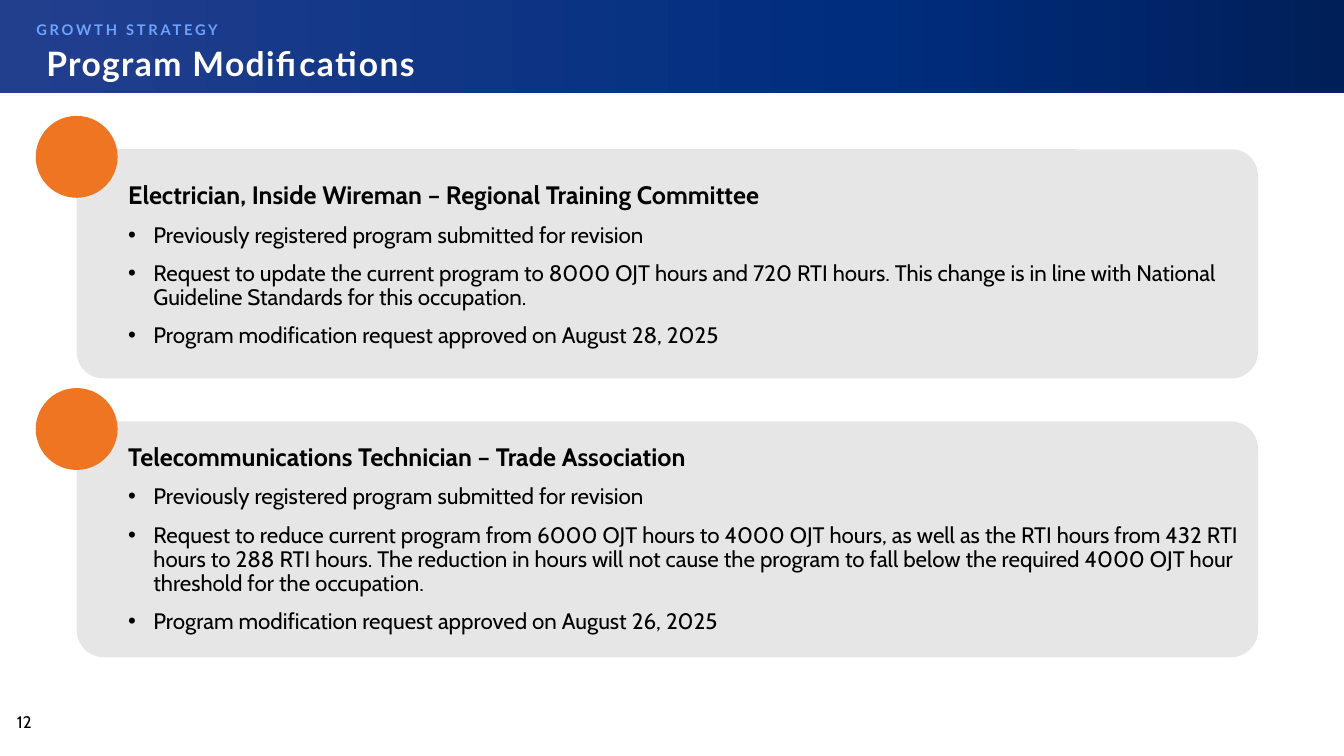
from dataclasses import dataclass

from lxml import etree
from pptx import Presentation
from pptx import util as u
from pptx.dml.color import RGBColor
from pptx.enum import shapes, text
from pptx.oxml import parse_xml
from pptx.oxml.ns import nsdecls, qn

COLORS = {
    "bar_left": "223F8E", "bar_mid": "002D7E", "bar_right": "001F58",
    "kicker": "6FA2FF", "white": "FFFFFF", "black": "000000",
    "card": "E7E6E6", "dot": "EE7623",
}
CARD_LEFT, CARD_WIDTH = 54.8, 843.8
DOT_SIZE, DOT_RISE = 58.5, 23.8
TEXT_LEFT, TEXT_WIDTH = 84.4, 814.2
INDENT = 18


@dataclass
class Program:
    """A program card with its heading and list."""
    top: float
    height: float
    text_top: float
    heading: str
    points: list[str]


PROGRAMS = [
    Program(106.6, 163.6, 108, "Electrician, Inside Wireman – Regional Training Committee", [
        "Previously registered program submitted for revision",
        "Request to update the current program to 8000 OJT hours and 720 RTI hours. "
        "This change is in line with National Guideline Standards for this occupation.",
        "Program modification request approved on August 28, 2025",
    ]),
    Program(301, 168.5, 301, "Telecommunications Technician – Trade Association", [
        "Previously registered program submitted for revision",
        "Request to reduce current program from 6000 OJT hours to 4000 OJT hours, as well as "
        "the RTI hours from 432 RTI hours to 288 RTI hours. The reduction in hours will not "
        "cause the program to fall below the required 4000 OJT hour threshold for the occupation.",
        "Program modification request approved on August 26, 2025",
    ]),
]


def apply(obj, **values) -> None:
    """Set every named attribute on an object."""
    for name, value in values.items():
        setattr(obj, name, value)


def place(sp, left: float, top: float, width: float, height: float) -> None:
    """Move and size a shape in points."""
    apply(sp, left=u.Pt(left), top=u.Pt(top), width=u.Pt(width), height=u.Pt(height))


def add_block(s, kind, box: tuple, color: str | None = None):
    """Add a borderless, shadowless shape."""
    sp = s.shapes.add_shape(kind, *map(u.Pt, box))
    sp.shadow.inherit = False
    sp.line.fill.background()
    if color:
        sp.fill.solid()
        sp.fill.fore_color.rgb = RGBColor.from_string(COLORS[color])
    return sp


def add_bar(s) -> None:
    """Add the header bar with its three-stop gradient."""
    sp = add_block(s, shapes.MSO_SHAPE.RECTANGLE, (0, 0, 960, 66.4))
    stops = "".join(
        f'<a:gs pos="{pos * 1000}"><a:srgbClr val="{COLORS[name]}"/></a:gs>'
        for pos, name in ((0, "bar_left"), (65, "bar_mid"), (100, "bar_right")))
    sp._element.spPr.insert(2, parse_xml(
        f'<a:gradFill {nsdecls("a")}><a:gsLst>{stops}</a:gsLst><a:lin ang="0" scaled="0"/></a:gradFill>'))


def set_frame(tf, anchor, inset: tuple | None = None) -> None:
    """Set wrapping, anchor and insets of a text frame."""
    apply(tf, word_wrap=True, auto_size=text.MSO_AUTO_SIZE.NONE, vertical_anchor=anchor)
    if inset:
        sides = ("margin_left", "margin_top", "margin_right", "margin_bottom")
        apply(tf, **dict(zip(sides, map(u.Pt, inset))))


def write(p, words: str, size: float, font: str, color: str, bold: bool = False,
          before: float = 0, tracking: float = 0) -> None:
    """Write one formatted run into a paragraph."""
    apply(p, alignment=text.PP_ALIGN.LEFT, line_spacing=0.9, space_before=u.Pt(before))
    r = p.add_run()
    r.text = words
    apply(r.font, size=u.Pt(size), name=font, bold=bold)
    r.font.color.rgb = RGBColor.from_string(COLORS[color])
    if tracking:
        r._r.get_or_add_rPr().set("spc", str(int(tracking * 100)))


def set_bullet(p, bulleted: bool) -> None:
    """Set or clear the bullet and hanging indent."""
    pPr = p._p.get_or_add_pPr()
    indent = u.Pt(INDENT) if bulleted else 0
    pPr.set("marL", str(indent))
    pPr.set("indent", str(-indent))
    if bulleted:
        etree.SubElement(pPr, qn("a:buFont")).set("typeface", "Arial")
        etree.SubElement(pPr, qn("a:buChar")).set("char", "•")
    else:
        etree.SubElement(pPr, qn("a:buNone"))


def add_card(s, program: Program) -> None:
    """Draw the card and dot of a program."""
    card = add_block(s, shapes.MSO_SHAPE.ROUNDED_RECTANGLE,
                     (CARD_LEFT, program.top, CARD_WIDTH, program.height), "card")
    card.adjustments[0] = 0.115
    add_block(s, shapes.MSO_SHAPE.OVAL,
              (CARD_LEFT - DOT_SIZE / 2, program.top - DOT_RISE, DOT_SIZE, DOT_SIZE), "dot")


def fill_body(body, program: Program) -> None:
    """Write a program into a body placeholder."""
    place(body, TEXT_LEFT, program.text_top, TEXT_WIDTH, program.height)
    tf = body.text_frame
    set_frame(tf, text.MSO_ANCHOR.MIDDLE)
    set_bullet(tf.paragraphs[0], False)
    write(tf.paragraphs[0], program.heading, 18, "Cabin", "black", bold=True)
    for point in program.points:
        p = tf.add_paragraph()
        set_bullet(p, True)
        write(p, point, 16, "Cabin", "black", before=10)


def add_label(s, box: tuple, anchor, inset: tuple | None, words: str, *style, **extra) -> None:
    """Add a one-line text box."""
    tf = s.shapes.add_textbox(*map(u.Pt, box)).text_frame
    set_frame(tf, anchor, inset)
    write(tf.paragraphs[0], words, *style, **extra)


def main() -> None:
    """Build and save the slide."""
    prs = Presentation()
    apply(prs, slide_width=u.Pt(960), slide_height=u.Pt(540))
    s = prs.slides.add_slide(prs.slide_layouts[3])
    title, *bodies = list(s.placeholders)

    add_bar(s)
    for program in PROGRAMS:
        add_card(s, program)
    for holder in (title, *bodies):
        s.shapes._spTree.append(holder._element)

    place(title, 25.9, 28.8, 828, 36.7)
    set_frame(title.text_frame, text.MSO_ANCHOR.MIDDLE)
    write(title.text_frame.paragraphs[0], "Program Modifications", 24, "Lato", "white",
          bold=True, tracking=1)
    for body, program in zip(bodies, PROGRAMS):
        fill_body(body, program)

    add_label(s, (25.9, 15.8, 264, 12.2), text.MSO_ANCHOR.BOTTOM, (0, 0, 0, 0),
              "GROWTH STRATEGY", 10.5, "Lato", "kicker", bold=True, tracking=2)
    add_label(s, (5, 506.2, 43.2, 21.6), text.MSO_ANCHOR.TOP, None, "12", 12, "Cabin", "black")
    prs.save("out.pptx")


if __name__ == "__main__":
    main()
